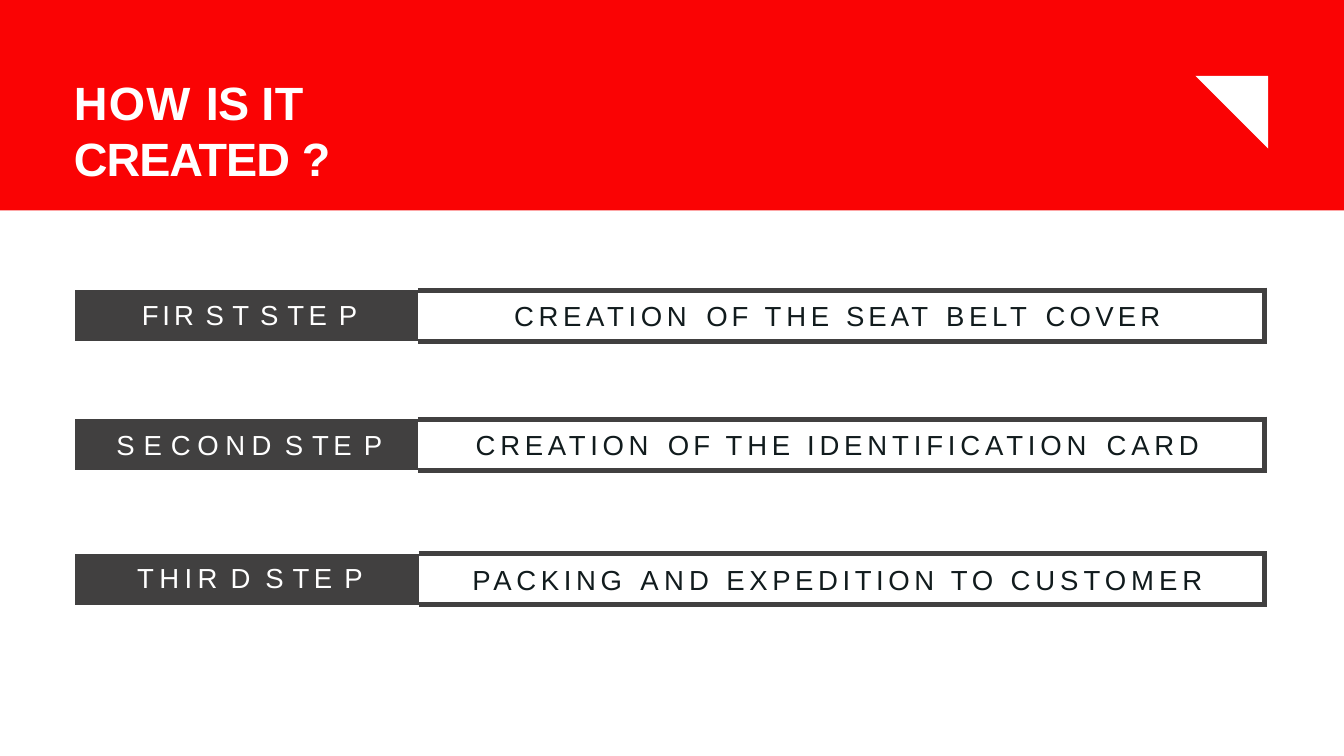
from pptx import Presentation
from pptx.dml.color import RGBColor
from pptx.enum.shapes import MSO_SHAPE as SHAPE
from pptx.enum.text import MSO_ANCHOR as ANCHOR, MSO_AUTO_SIZE as AUTO, PP_ALIGN as ALIGN
from pptx.oxml import parse_xml
from pptx.oxml.ns import nsdecls
from pptx.util import Inches, Pt

RED, WHITE, GREY, INK = "FA0304", "FFFFFF", "414040", "111B1D"


def rgb(color):
    return RGBColor.from_string(color)


def add_runs(p, runs, size, color, bold=False):
    for text, spacing in runs:
        r = p.add_run()
        r.text = text
        r.font.name = "Arial"
        r.font.size = Pt(size)
        r.font.bold = bold
        r.font.color.rgb = rgb(color)
        r._r.get_or_add_rPr().set("spc", str(round(spacing * 100)))


prs = Presentation()
prs.slide_width, prs.slide_height = Inches(20), Inches(11.25)
slide = prs.slides.add_slide(prs.slide_layouts[5])

band = slide.shapes.add_shape(SHAPE.RECTANGLE, 0, 0, Inches(20), Inches(3.13))
builder = slide.shapes.build_freeform(Inches(17.79), Inches(1.13))
builder.add_line_segments(
    [(Inches(18.87), Inches(1.13)), (Inches(18.87), Inches(2.21))], close=True)
corner = builder.convert_to_shape()
for sp, color in ((band, RED), (corner, WHITE)):
    sp.fill.solid()
    sp.fill.fore_color.rgb = rgb(color)
    sp.line.fill.background()
    sp.shadow.inherit = False

title = slide.shapes.title
band._element.addnext(title._element)
title.left, title.top = Inches(1.09), Inches(1.09)
title.width, title.height = Inches(7.29), Inches(0.86)
tf = title.text_frame
tf.auto_size = AUTO.SHAPE_TO_FIT_TEXT
tf.word_wrap = True
tf.vertical_anchor = ANCHOR.TOP
tf.margin_left = tf.margin_right = tf.margin_bottom = 0
tf.margin_top = Inches(0.01)
p = tf.paragraphs[0]
p.alignment = ALIGN.LEFT
p._p.get_or_add_pPr().set("marL", str(Inches(0.01)))
add_runs(p, [("HOW ", 1.3), ("IS ", -0.9), ("IT ", 0.8), ("CREATED ", -1.1), ("?", -3.1)],
         50, WHITE, True)

GAP = (" ", 0)
STEP = [("S", 1.4), GAP, ("TE", 4.7), GAP, ("P", 0)]
steps = [
    (1.11, 4.32, 0.15, [2.65, 2.46, 4.2, 0.87, 1.21, 1.49, 1.48, 3.35], 1, 1.43,
     [("FIR", 4.2), GAP, ("S", 1.4), GAP, ("T", 0)],
     [("CREATION", 5), ("OF", 4.2), ("THE", 5.1), ("SEAT", 4.4), ("BELT", 5), ("COVER", 4.5)]),
    (1.12, 6.24, 0.17, [3.01, 2.09, 3.63, 0.86, 1.21, 4.46, 2.44], 0.61, 0.86,
     [("S", 1.4), GAP, ("E", 1.4), GAP, ("COND", 7)],
     [("CREATION", 5), ("OF", 4.2), ("THE", 5.1), ("IDENTIFICATION", 5.2), ("CARD", 5)]),
    (1.11, 8.24, 0.15, [2.73, 2.39, 3.21, 1.28, 3.34, 0.89, 3.87], 0.93, 0.8,
     [("THIR", 5.8), GAP, ("D", 0)],
     [("PACKING", 5), ("AND", 5.7), ("EXPEDITION", 4.9), ("TO", 5), ("CUSTOMER", 5.3)]),
]

for left, top, label_top, widths, label_indent, text_indent, ordinal, words in steps:
    frame = slide.shapes.add_table(1, len(widths), Inches(left), Inches(top),
                                   Inches(sum(widths)), Inches(0.76))
    table = frame.table
    table.first_row = table.horz_banding = False
    table._tbl.tblPr[0].text = "{2D5ABB26-0587-4C30-8999-92F81FD0307C}"
    table.rows[0].height = Inches(0.76)
    contents = [ordinal, STEP] + [[word] for word in words]
    indents = [label_indent, 0.11, text_indent] + [0.09] * (len(words) - 1)
    for i, (width, runs, indent) in enumerate(zip(widths, contents, indents)):
        table.columns[i].width = Inches(width)
        cell = table.cell(0, i)
        is_label = i < 2
        cell.margin_left = cell.margin_right = cell.margin_bottom = 0
        cell.margin_top = Inches(label_top if is_label else 0.17)
        p = cell.text_frame.paragraphs[0]
        p._p.get_or_add_pPr().set("marL", str(Inches(indent)))
        add_runs(p, runs, 29.5, WHITE if is_label else INK)

        edges = []
        if i == len(widths) - 1:
            edges.append(("lnR", 6.45))
        if not is_label:
            edges += [("lnT", 6.31), ("lnB", 6.41)]
        for tag, weight in edges:
            cell._tc.get_or_add_tcPr().append(parse_xml(
                f'<a:{tag} {nsdecls("a")} w="{Pt(weight)}"><a:solidFill>'
                f'<a:srgbClr val="{GREY}"/></a:solidFill></a:{tag}>'))
        if is_label:
            cell.fill.solid()
            cell.fill.fore_color.rgb = rgb(GREY)
        else:
            cell.fill.background()

prs.save("out.pptx")
